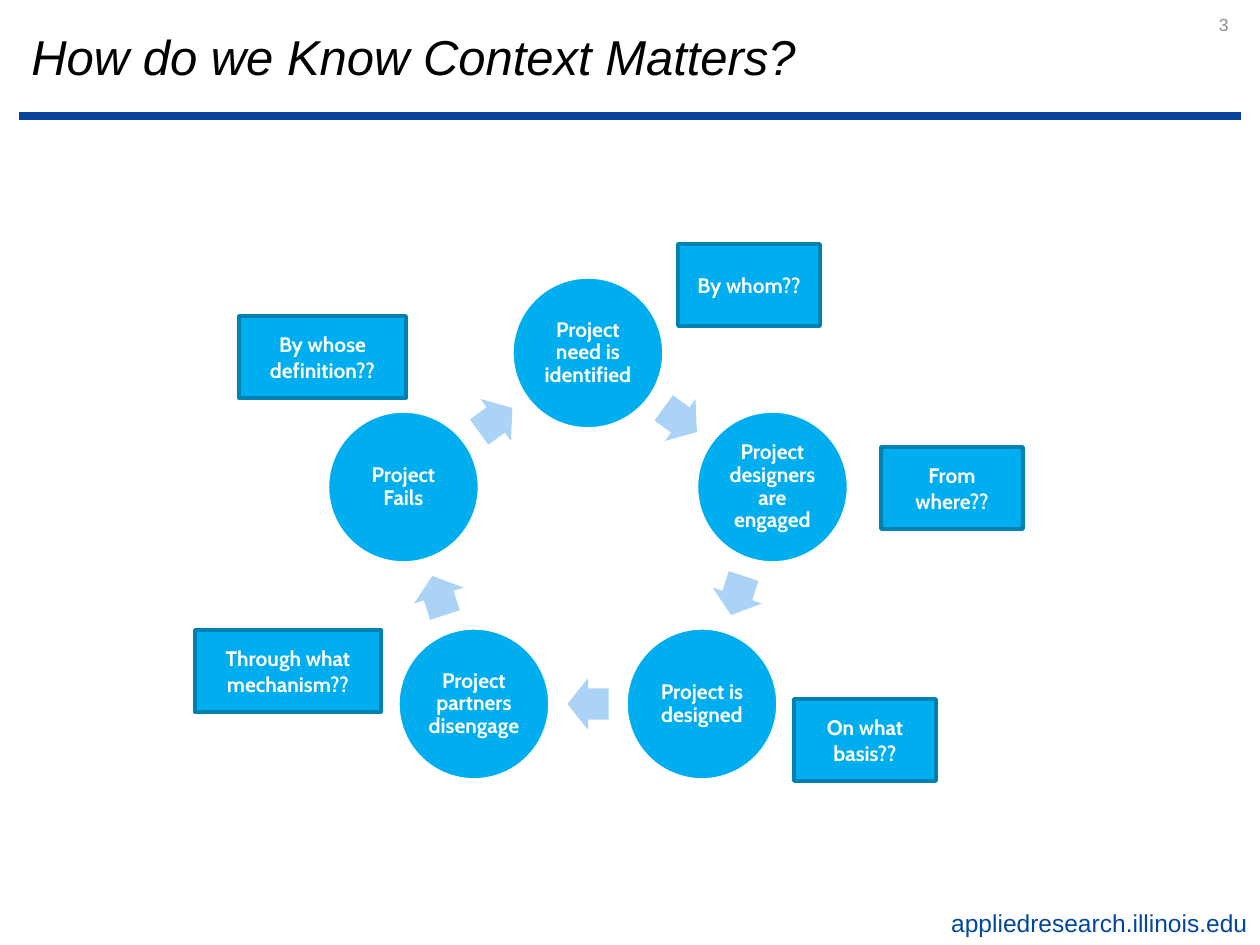
"""Build a slide with a five-step project cycle and the question raised at each step."""
from math import cos, radians, sin

from lxml.etree import SubElement
from pptx import Presentation
from pptx.dml.color import RGBColor
from pptx.enum.shapes import MSO_CONNECTOR, MSO_SHAPE
from pptx.enum.text import MSO_ANCHOR, PP_ALIGN
from pptx.oxml.ns import qn
from pptx.util import Pt

COLORS = {"rule": "08449B", "address": "00479D", "number": "8C8C8C", "title": "000000",
          "node": "00AEEF", "border": "0081B1", "arrow": "ABD3F6", "white": "FFFFFF"}
STEPS = ["Project need is identified", "Project designers are engaged", "Project is designed",
         "Project partners disengage", "Project Fails"]
QUESTIONS = [
    ("By whom??", 678, 244, 142),
    ("From where??", 881, 447, 142),
    ("On what basis??", 794, 699, 142),
    ("Through what mechanism??", 195, 630, 186),
    ("By whose definition??", 239, 316, 167),
]
LABELS = [
    ("appliedresearch.illinois.edu", (856, 902, 404, 43), MSO_ANCHOR.TOP, PP_ALIGN.RIGHT,
     {"size": Pt(14), "name": "Arial"}, "address"),
    ("3", (1038, 0, 203, 50), MSO_ANCHOR.MIDDLE, PP_ALIGN.RIGHT,
     {"size": Pt(10), "name": "Arial"}, "number"),
    ("How do we Know Context Matters?", (19, 0, 1223, 111), MSO_ANCHOR.MIDDLE, PP_ALIGN.LEFT,
     {"size": Pt(28), "name": "Arial", "italic": True}, "title"),
]
DIAGRAM_FONT = {"size": Pt(12), "name": "Cabin", "bold": True}
CENTER_X, CENTER_Y, RADIUS = 588, 547, 194
NODE_SIZE, ARROW_WIDTH, ARROW_HEIGHT, QUESTION_HEIGHT = 152, 41, 52, 82


def px(length):
    return round(length * 914400 / 126)


def color(name):
    return RGBColor.from_string(COLORS[name])


def write(shape, text, font, font_color, align=PP_ALIGN.CENTER, anchor=MSO_ANCHOR.MIDDLE):
    frame = shape.text_frame
    frame.word_wrap = True
    frame.vertical_anchor = anchor
    para = frame.paragraphs[0]
    para.alignment = align
    span = para.add_run()
    span.text = text
    for attribute, value in font.items():
        setattr(span.font, attribute, value)
    span.font.color.rgb = color(font_color)
    return frame


def add_block(slide, kind, place, fill, line=None):
    shape = slide.shapes.add_shape(kind, *map(px, place))
    shape.shadow.inherit = False
    shape.fill.solid()
    shape.fill.fore_color.rgb = color(fill)
    if line:
        shape.line.color.rgb = color(line)
        shape.line.width = Pt(2)
    else:
        shape.line.fill.background()
    return shape


def on_ring(angle, radius, width, height):
    x = CENTER_X + radius * sin(radians(angle))
    y = CENTER_Y - radius * cos(radians(angle))
    return x - width / 2, y - height / 2, width, height


def add_rule(slide):
    rule = slide.shapes.add_connector(MSO_CONNECTOR.STRAIGHT, px(19), px(116), px(1241), px(116))
    rule.line.color.rgb = color("rule")
    rule.line.width = Pt(4.5)
    SubElement(rule.element.spPr, qn("a:effectLst"))


def add_cycle(slide):
    turn = 360 / len(STEPS)
    for index, step in enumerate(STEPS):
        angle = index * turn
        node = add_block(slide, MSO_SHAPE.OVAL, on_ring(angle, RADIUS, NODE_SIZE, NODE_SIZE),
                         "node", "white")
        frame = write(node, step, DIAGRAM_FONT, "white")
        frame.paragraphs[0].line_spacing = 0.9
        for side in ("left", "top", "right", "bottom"):
            setattr(frame, f"margin_{side}", px(2))
        middle = angle + turn / 2
        place = on_ring(middle, RADIUS * cos(radians(turn / 2)), ARROW_WIDTH, ARROW_HEIGHT)
        arrow = add_block(slide, MSO_SHAPE.RIGHT_ARROW, place, "arrow")
        arrow.adjustments[0] = 0.6
        arrow.adjustments[1] = 0.5
        arrow.rotation = middle


def main():
    deck = Presentation()
    deck.slide_width, deck.slide_height = px(1260), px(945)
    slide = deck.slides.add_slide(deck.slide_layouts[6])
    add_rule(slide)
    for text, place, anchor, align, font, font_color in LABELS:
        box = slide.shapes.add_textbox(*map(px, place))
        write(box, text, font, font_color, align, anchor)
    add_cycle(slide)
    for text, left, top, width in QUESTIONS:
        box = add_block(slide, MSO_SHAPE.RECTANGLE, (left, top, width, QUESTION_HEIGHT),
                        "node", "border")
        write(box, text, DIAGRAM_FONT, "white")
    deck.save("out.pptx")


if __name__ == "__main__":
    main()
